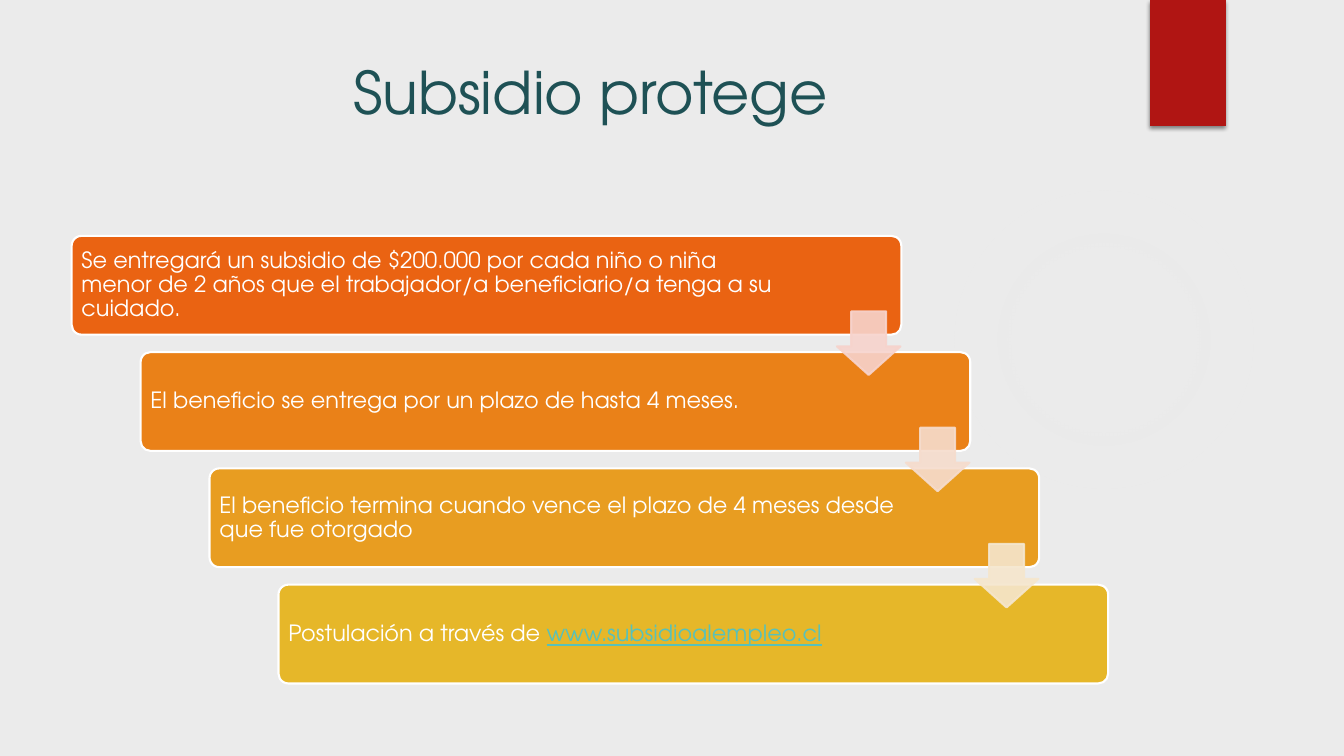
from dataclasses import dataclass

from pptx import Presentation
from pptx import util as u
from pptx.dml.color import RGBColor
from pptx.enum import shapes, text
from pptx.oxml import parse_xml
from pptx.oxml.ns import nsdecls, qn


@dataclass(frozen=True)
class Theme:
    font: str = "TeX Gyre Adventor"
    title_size: int = 42
    body_size: int = 16
    outline: float = 1.5
    background: str = "EBEBEB"
    title: str = "1E5155"
    ribbon: str = "B01513"
    shadow: str = "000000"
    glow: str = "F3F3F3"
    white: str = "FFFFFF"
    link: str = "58C1BA"
    steps: tuple = ("EA6312", "EA8118", "E89D21", "E6B729")
    arrows: tuple = ("F7D3CC", "F6DCCD", "F5E6CD")


class SlideBuilder:
    """Places elements by (left, top, width, height) in percent of the slide."""

    def __init__(self, deck, theme):
        self.deck, self.theme = deck, theme
        self.slide = deck.slides.add_slide(deck.slide_layouts[6])
        fill = self.slide.background.fill
        fill.solid()
        fill.fore_color.rgb = RGBColor.from_string(theme.background)

    def frame(self, place):
        width, height = self.deck.slide_width, self.deck.slide_height
        return [round(share * full / 100)
                for share, full in zip(place, (width, height, width, height))]

    def shape(self, kind, place, color, outline=None, adjustments=(), opacity=None):
        item = self.slide.shapes.add_shape(kind, *self.frame(place))
        item.shadow.inherit = False
        for index, value in enumerate(adjustments):
            item.adjustments[index] = value
        item.fill.solid()
        item.fill.fore_color.rgb = RGBColor.from_string(color)
        if outline:
            item.line.width = u.Pt(self.theme.outline)
            item.line.color.rgb = RGBColor.from_string(outline)
        else:
            item.line.fill.background()
        if opacity:
            for paint in item._element.spPr.iter(qn("a:srgbClr")):
                paint.append(parse_xml(
                    f'<a:alpha {nsdecls("a")} val="{opacity * 1000}"/>'))
        return item

    def glow(self, place):
        """Draw a circle that fades from its centre to its rim."""
        circle = self.shape(shapes.MSO_SHAPE.OVAL, place, self.theme.glow)
        stops = "".join(
            f'<a:gs pos="{pos * 1000}"><a:srgbClr val="{self.theme.glow}">'
            f'<a:alpha val="{alpha * 1000}"/></a:srgbClr></a:gs>'
            for pos, alpha in ((0, 7), (36, 6), (69, 0)))
        properties = circle._element.spPr
        properties.replace(properties.find(qn("a:solidFill")), parse_xml(
            f'<a:gradFill {nsdecls("a")}><a:gsLst>{stops}</a:gsLst>'
            '<a:path path="circle"><a:fillToRect l="50000" t="50000" '
            'r="50000" b="50000"/></a:path></a:gradFill>'))

    def ribbon(self, place):
        band = self.shape(shapes.MSO_SHAPE.RECTANGLE, place, self.theme.ribbon)
        band._element.spPr.find(qn("a:effectLst")).append(parse_xml(
            f'<a:outerShdw {nsdecls("a")} blurRad="{u.Pt(3)}" dist="{u.Pt(2)}" '
            f'dir="5400000" rotWithShape="0"><a:srgbClr val="{self.theme.shadow}">'
            '<a:alpha val="45000"/></a:srgbClr></a:outerShdw>'))

    def label(self, place, pieces, size, anchor, align, inset=None, spacing=None):
        """Add a paragraph of (wording, colour, underlined) pieces."""
        box = self.slide.shapes.add_textbox(*self.frame(place)).text_frame
        box.word_wrap = True
        box.vertical_anchor = anchor
        if inset:
            box.margin_left = box.margin_right = u.Inches(inset)
            box.margin_top = box.margin_bottom = u.Inches(inset)
        paragraph = box.paragraphs[0]
        paragraph.alignment = align
        paragraph.line_spacing = spacing
        for wording, color, underlined in pieces:
            run = paragraph.add_run()
            run.text = wording
            run.font.name = self.theme.font
            run.font.size = u.Pt(size)
            run.font.color.rgb = RGBColor.from_string(color)
            run.font.underline = underlined

    def title(self, place, wording):
        self.label(place, [(wording, self.theme.title, False)], self.theme.title_size,
                   text.MSO_ANCHOR.TOP, text.PP_ALIGN.CENTER)

    def step(self, left, top, text_width, color, pieces):
        self.shape(shapes.MSO_SHAPE.ROUNDED_RECTANGLE, (left, top, 61.73, 13.07),
                   color, self.theme.white, (0.1,))
        self.label((left + 0.21, top + 0.4, text_width, 12.27), pieces,
                   self.theme.body_size, text.MSO_ANCHOR.MIDDLE,
                   text.PP_ALIGN.LEFT, 0.07, 0.9)

    def arrow(self, left, top, color):
        self.shape(shapes.MSO_SHAPE.DOWN_ARROW, (left, top, 4.73, 8.4),
                   color, color, (0.55, 0.45), 90)


def main():
    deck = Presentation()
    deck.slide_width, deck.slide_height = u.Inches(13.33), u.Inches(7.5)
    theme = Theme()
    page = SlideBuilder(deck, theme)
    page.glow((70.58, 24.4, 23.1, 41.07))
    page.ribbon((85.58, 0, 5.63, 16.67))
    page.title((5.33, 6.67, 77.18, 20.4), "Subsidio protege")

    benefits = [
        [("Se entregará un subsidio de $200.000 por cada niño o niña menor de 2 años "
          "que el trabajador/a beneficiario/a tenga a su cuidado.", theme.white, False)],
        [("El beneficio se entrega por un plazo de hasta 4 meses.", theme.white, False)],
        [("El beneficio termina cuando vence el plazo de 4 meses desde que fue otorgado",
          theme.white, False)],
        [("Postulación a través de ", theme.white, False),
         ("www.subsidioalempleo.cl", theme.link, True)],
    ]
    stairs = [(5.33 + 5.13 * index, 31.2 + 15.38 * index)
              for index in range(len(benefits))]
    text_widths = [53.18] + [51.4] * 3
    for (left, top), width, color, pieces in zip(stairs, text_widths, theme.steps, benefits):
        page.step(left, top, width, color, pieces)
    for (left, top), color in zip(stairs, theme.arrows):
        page.arrow(left + 56.94, top + 10, color)

    deck.save("out.pptx")


if __name__ == "__main__":
    main()
